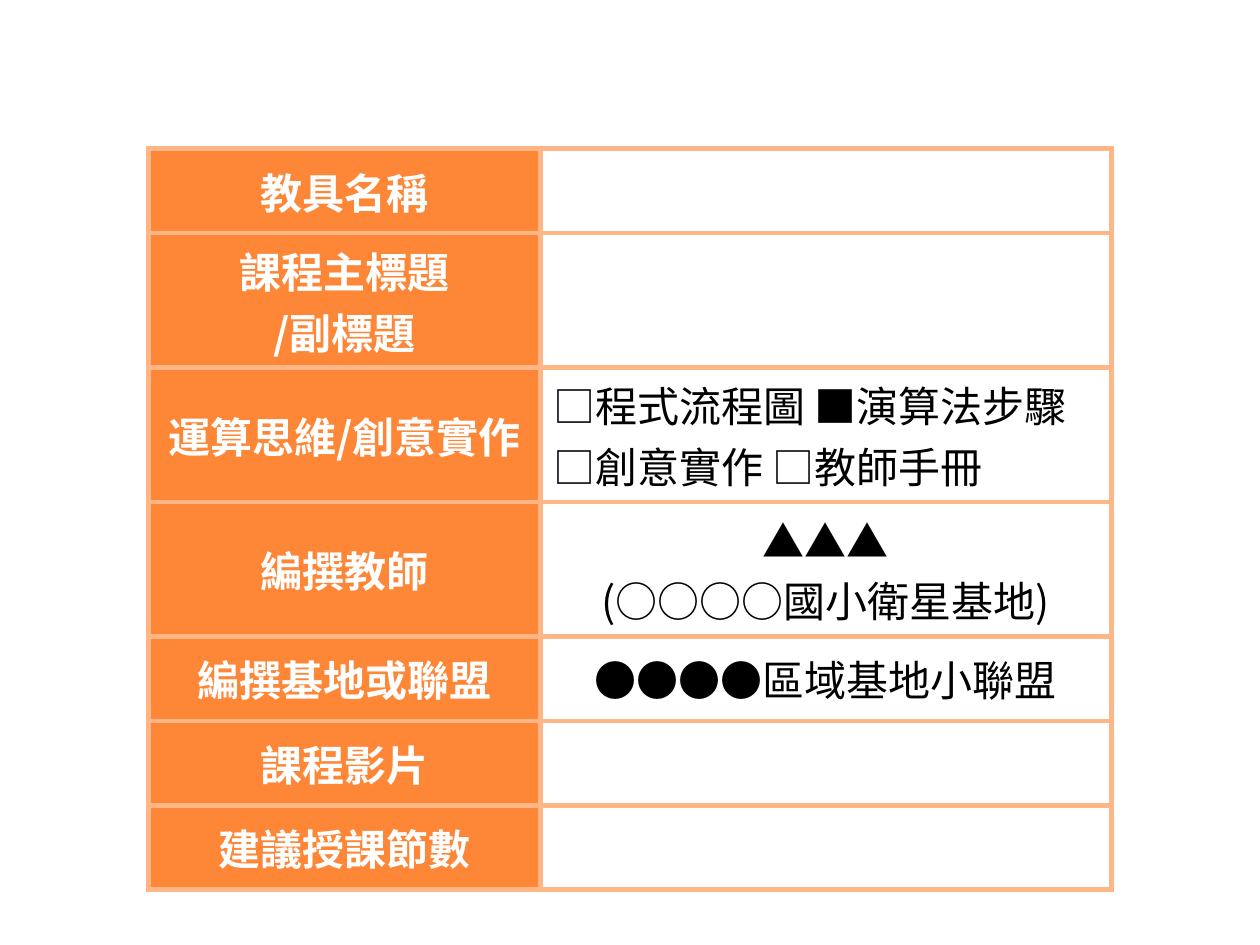
from lxml.etree import SubElement
from pptx import Presentation
from pptx.dml.color import RGBColor
from pptx.enum.text import MSO_ANCHOR as Anchor, PP_ALIGN as Align
from pptx.oxml.ns import qn
from pptx.util import Inches, Pt

FONT = "Noto Sans CJK SC"
ORANGE = RGBColor(0xFE, 0x86, 0x37)
PEACH = RGBColor(0xFE, 0xB6, 0x87)
WHITE = RGBColor(0xFF, 0xFF, 0xFF)
BLACK = RGBColor(0, 0, 0)

COURSE_FIELDS = [
    ("教具名稱", "", Align.CENTER),
    ("課程主標題\n/副標題", "", Align.CENTER),
    ("運算思維/創意實作", "□程式流程圖 ■演算法步驟\n□創意實作 □教師手冊", Align.LEFT),
    ("編撰教師", "▲▲▲\n(○○○○國小衛星基地)", Align.CENTER),
    ("編撰基地或聯盟", "●●●●區域基地小聯盟", Align.CENTER),
    ("課程影片", "", Align.CENTER),
    ("建議授課節數", "", Align.CENTER),
]
LEFT, TOP = 1.18, 1.18
COLUMN_WIDTHS = (3.11, 4.53)
ROW_HEIGHT = 0.67


def write(cell, text, color=BLACK, bold=False, align=Align.CENTER, size=24):
    """Fill a table cell with formatted text."""
    cell.vertical_anchor = Anchor.MIDDLE
    paragraph = cell.text_frame.paragraphs[0]
    paragraph.text = text
    paragraph.alignment = align
    for run in paragraph.runs:
        font = run.font
        font.size, font.bold, font.name = Pt(size), bold, FONT
        font.color.rgb = color
        SubElement(run._r.get_or_add_rPr(), qn("a:ea"), typeface=FONT)


def outline(cell, color=PEACH, width=3):
    """Draw all four borders of a table cell."""
    properties = cell._tc.get_or_add_tcPr()
    for side in ("lnL", "lnR", "lnT", "lnB"):
        border = SubElement(properties, qn(f"a:{side}"), w=str(Pt(width)))
        SubElement(SubElement(border, qn("a:solidFill")), qn("a:srgbClr"), val=str(color))


def main():
    """Build the course information slide."""
    deck = Presentation()
    deck.slide_width, deck.slide_height = Inches(10), Inches(7.5)
    slide = deck.slides.add_slide(deck.slide_layouts[6])
    course_table = slide.shapes.add_table(
        len(COURSE_FIELDS), len(COLUMN_WIDTHS), Inches(LEFT), Inches(TOP),
        Inches(sum(COLUMN_WIDTHS)), Inches(ROW_HEIGHT * len(COURSE_FIELDS)),
    ).table
    course_table.first_row = course_table.horz_banding = False
    for column, width in zip(course_table.columns, COLUMN_WIDTHS):
        column.width = Inches(width)
    for row, (label, value, align) in zip(course_table.rows, COURSE_FIELDS):
        row.height = Inches(ROW_HEIGHT)
        label_cell, value_cell = row.cells
        for cell in (label_cell, value_cell):
            outline(cell)
        label_cell.fill.solid()
        label_cell.fill.fore_color.rgb = ORANGE
        value_cell.fill.background()
        write(label_cell, label, color=WHITE, bold=True)
        write(value_cell, value, align=align)
    deck.save("out.pptx")


if __name__ == "__main__":
    main()
